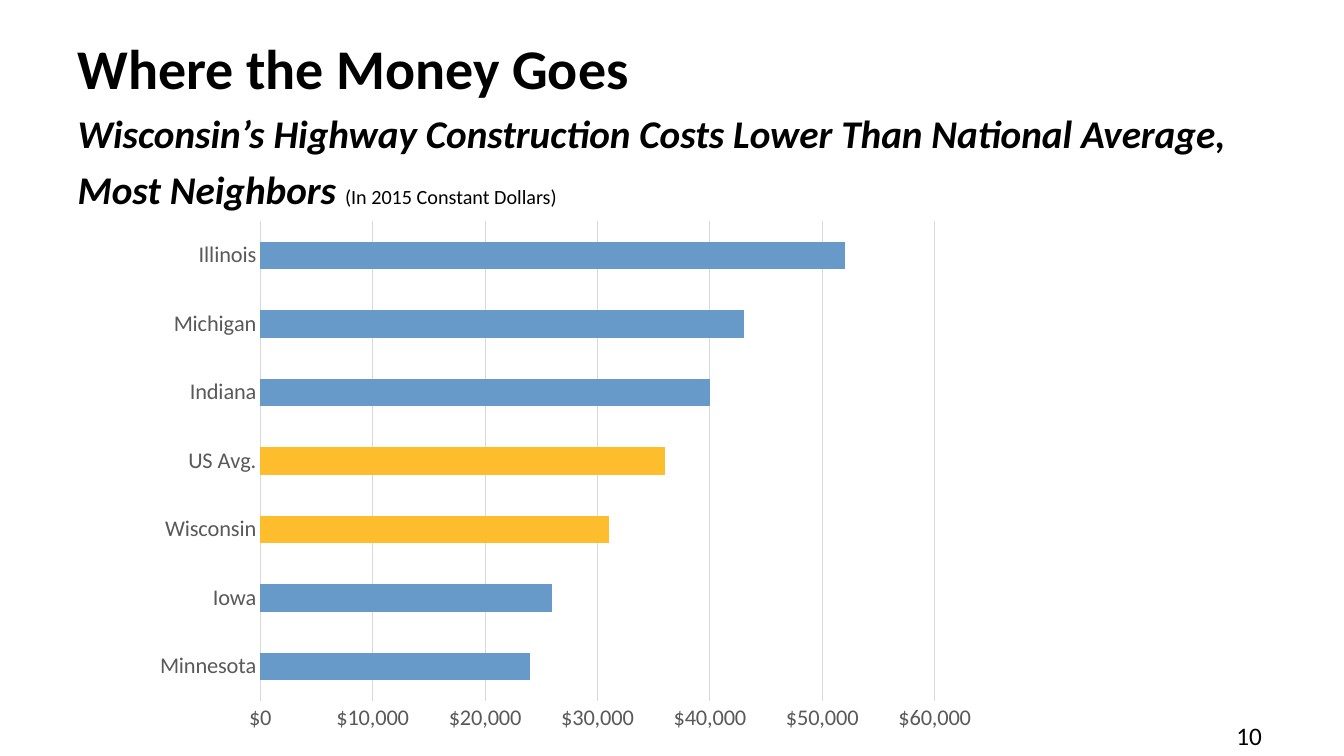
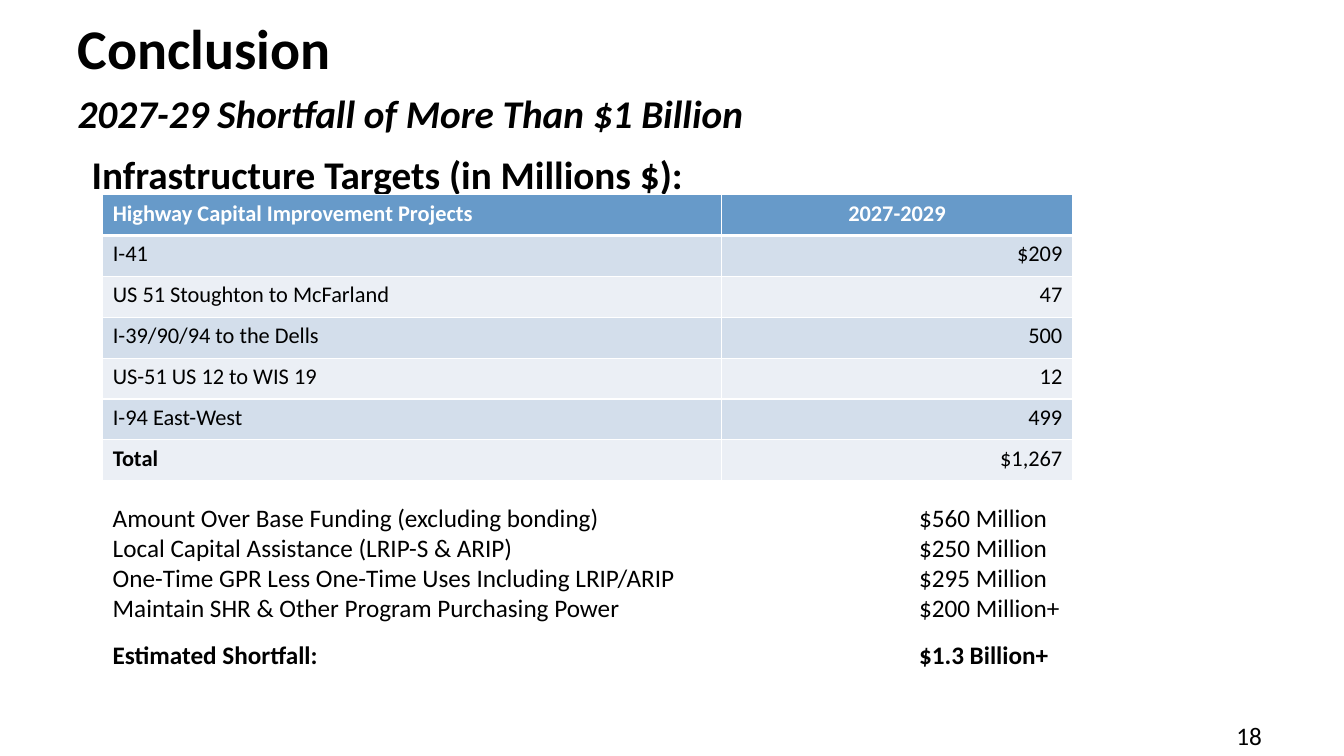
from lxml.etree import SubElement
from pptx import Presentation
from pptx.chart.data import CategoryChartData
from pptx.dml.color import RGBColor
from pptx.enum.chart import XL_CHART_TYPE, XL_TICK_MARK
from pptx.enum.text import MSO_ANCHOR, MSO_AUTO_SIZE, PP_ALIGN
from pptx.oxml import parse_xml
from pptx.oxml.ns import nsdecls, qn
from pptx.util import Pt

FONT = "Calibri"
BLACK = RGBColor(0x00, 0x00, 0x00)
WHITE = RGBColor(0xFF, 0xFF, 0xFF)
BLUE = RGBColor(0x67, 0x9A, 0xC9)
GOLD = RGBColor(0xFD, 0xBD, 0x2C)
GRAY_TEXT = RGBColor(0x59, 0x59, 0x59)
GRAY_LINE = RGBColor(0xD9, 0xD9, 0xD9)
BANDS = (RGBColor(0xD3, 0xDE, 0xEB), RGBColor(0xEB, 0xEF, 0xF5))

TITLE_ONLY, TITLE_AND_CONTENT = 5, 1
AMOUNT_TAB = 576

COSTS = {
    "Minnesota": 24000,
    "Iowa": 26000,
    "Wisconsin": 31000,
    "US Avg.": 36000,
    "Indiana": 40000,
    "Michigan": 43000,
    "Illinois": 52000,
}
HIGHLIGHTED = ("Wisconsin", "US Avg.")

PROJECTS = (
    ("Highway Capital Improvement Projects", "2027-2029"),
    ("I-41", "$209"),
    ("US 51 Stoughton to McFarland", "47"),
    ("I-39/90/94 to the Dells", "500"),
    ("US-51 US 12 to WIS 19", "12"),
    ("I-94 East-West", "499"),
    ("Total", "$1,267"),
)

SHORTFALL = (
    ("Amount Over Base Funding (excluding bonding)", "$560 Million"),
    ("Local Capital Assistance (LRIP-S & ARIP)", "$250 Million"),
    ("One-Time GPR Less One-Time Uses Including LRIP/ARIP", "$295 Million"),
    ("Maintain SHR & Other Program Purchasing Power", "$200 Million+"),
    ("Estimated Shortfall:", "$1.3 Billion+"),
)


def format_font(font, size, color=BLACK, bold=False, italic=False):
    """Apply the shared typeface and the given format to a font."""
    font.name = FONT
    font.size = Pt(size)
    font.color.rgb = color
    font.bold = bold
    font.italic = italic


def add_text(paragraph, text, **text_format):
    """Append a formatted run to a paragraph."""
    run = paragraph.add_run()
    run.text = text
    format_font(run.font, **text_format)


def place(shape, left, top, width, height):
    """Set the position and size of a shape in points."""
    shape.left, shape.top = Pt(left), Pt(top)
    shape.width, shape.height = Pt(width), Pt(height)


def prepare_frame(shape):
    """Return a wrapping, top-anchored text frame of fixed size."""
    frame = shape.text_frame
    frame.word_wrap = True
    frame.auto_size = MSO_AUTO_SIZE.NONE
    frame.vertical_anchor = MSO_ANCHOR.TOP
    return frame


def add_text_box(slide, left, top, width, height):
    """Add an empty text box and return its text frame."""
    box = slide.shapes.add_textbox(Pt(left), Pt(top), Pt(width), Pt(height))
    return prepare_frame(box)


def add_slide(presentation, layout, top, title, subtitle, number, note=""):
    """Add a slide with a two-level title and a page number."""
    slide = presentation.slides.add_slide(presentation.slide_layouts[layout])
    place(slide.shapes.title, 48.24, top, 866, 90)
    paragraph = prepare_frame(slide.shapes.title).paragraphs[0]
    paragraph.alignment = PP_ALIGN.LEFT
    paragraph.line_spacing = Pt(40)
    add_text(paragraph, title, size=40, bold=True)
    paragraph.add_line_break()
    add_text(paragraph, subtitle, size=28, bold=True, italic=True)
    if note:
        add_text(paragraph, note, size=14.4)
    number_frame = add_text_box(slide, 876, 511, 72, 51)
    add_text(number_frame.paragraphs[0], number, size=18)
    return slide


def add_heading(slide, text):
    """Write an unbulleted heading in the body placeholder."""
    body = slide.placeholders[1]
    place(body, 58.3, 103.7, 828, 45)
    paragraph = prepare_frame(body).paragraphs[0]
    paragraph.space_before = Pt(0)
    properties = paragraph._p.get_or_add_pPr()
    properties.set("marL", "0")
    properties.set("indent", "0")
    SubElement(properties, qn("a:buNone"))
    add_text(paragraph, text, size=28, bold=True)


def add_cost_chart(slide):
    """Add the horizontal bar chart of construction costs."""
    data = CategoryChartData()
    data.categories = list(COSTS)
    data.add_series("Series 1", list(COSTS.values()))
    chart = slide.shapes.add_chart(
        XL_CHART_TYPE.BAR_STACKED, Pt(102.24), Pt(150.5), Pt(603.4), Pt(380), data
    ).chart
    chart.has_legend = False
    chart.has_title = False
    format_font(chart.font, size=10)

    plot = chart.plots[0]
    plot.gap_width = 150
    plot.overlap = 100
    plot.vary_by_categories = False
    series = plot.series[0]
    series.format.fill.solid()
    series.format.fill.fore_color.rgb = BLUE
    for index, category in enumerate(COSTS):
        if category in HIGHLIGHTED:
            fill = series.points[index].format.fill
            fill.solid()
            fill.fore_color.rgb = GOLD

    categories, values = chart.category_axis, chart.value_axis
    for axis in (categories, values):
        axis.major_tick_mark = XL_TICK_MARK.NONE
        axis.minor_tick_mark = XL_TICK_MARK.NONE
        format_font(axis.tick_labels.font, size=16, color=GRAY_TEXT)
    categories.has_major_gridlines = False
    values.has_major_gridlines = True
    for line in (categories.format.line, values.major_gridlines.format.line):
        line.color.rgb = GRAY_LINE
        line.width = Pt(0.75)
    values.format.line.fill.background()
    values.minimum_scale, values.maximum_scale = 0, 60000
    values.major_unit = 10000
    values.tick_labels.number_format = '"$"#,##0'
    values.tick_labels.number_format_is_linked = False


def set_borders(cell, bottom_width):
    """Give a cell white borders, one point wide except at the bottom."""
    properties = cell._tc.get_or_add_tcPr()
    widths = {"lnL": 1, "lnR": 1, "lnT": 1, "lnB": bottom_width}
    for index, (side, width) in enumerate(widths.items()):
        border = parse_xml(
            f'<a:{side} {nsdecls("a")} w="{Pt(width)}"><a:solidFill>'
            f'<a:srgbClr val="{WHITE}"/></a:solidFill></a:{side}>'
        )
        properties.insert(index, border)


def add_project_table(slide):
    """Add the banded table of highway projects."""
    widths, row_height = (442, 250.6), 29.2
    table = slide.shapes.add_table(
        len(PROJECTS), len(widths), Pt(73.44), Pt(139),
        Pt(sum(widths)), Pt(row_height * len(PROJECTS)),
    ).table
    for column, width in zip(table.columns, widths):
        column.width = Pt(width)
    for row_index, texts in enumerate(PROJECTS):
        table.rows[row_index].height = Pt(row_height)
        header = row_index == 0
        for column_index, text in enumerate(texts):
            cell = table.cell(row_index, column_index)
            cell.fill.solid()
            cell.fill.fore_color.rgb = BLUE if header else BANDS[(row_index - 1) % 2]
            set_borders(cell, 3 if header else 1)
            paragraph = cell.text_frame.paragraphs[0]
            if column_index == 1:
                paragraph.alignment = PP_ALIGN.CENTER if header else PP_ALIGN.RIGHT
            add_text(
                paragraph, text, size=16, color=WHITE if header else BLACK,
                bold=header or text == "Total",
            )


def add_shortfall_list(slide):
    """Add the funding lines with amounts aligned at a tab stop."""
    frame = add_text_box(slide, 73.44, 355, 736.6, 128)
    for index, (label, amount) in enumerate(SHORTFALL):
        paragraph = frame.add_paragraph() if index else frame.paragraphs[0]
        last = index == len(SHORTFALL) - 1
        if last:
            paragraph.space_before = Pt(12)
        tabs = SubElement(paragraph._p.get_or_add_pPr(), qn("a:tabLst"))
        SubElement(tabs, qn("a:tab"), pos=str(Pt(AMOUNT_TAB)), algn="l")
        add_text(paragraph, f"{label}\t{amount}", size=18, bold=last)


def main():
    """Build both slides and save the presentation."""
    presentation = Presentation()
    presentation.slide_width, presentation.slide_height = Pt(960), Pt(540)

    costs = add_slide(
        presentation, TITLE_ONLY, 28, "Where the Money Goes",
        "Wisconsin’s Highway Construction Costs Lower Than National Average, "
        "Most Neighbors ", "10", note="(In 2015 Constant Dollars)",
    )
    add_cost_chart(costs)

    conclusion = add_slide(
        presentation, TITLE_AND_CONTENT, 13.7, "Conclusion",
        "2027-29 Shortfall of More Than $1 Billion", "18",
    )
    add_heading(conclusion, "Infrastructure Targets (in Millions $):")
    add_project_table(conclusion)
    add_shortfall_list(conclusion)
    presentation.save("out.pptx")


if __name__ == "__main__":
    main()
